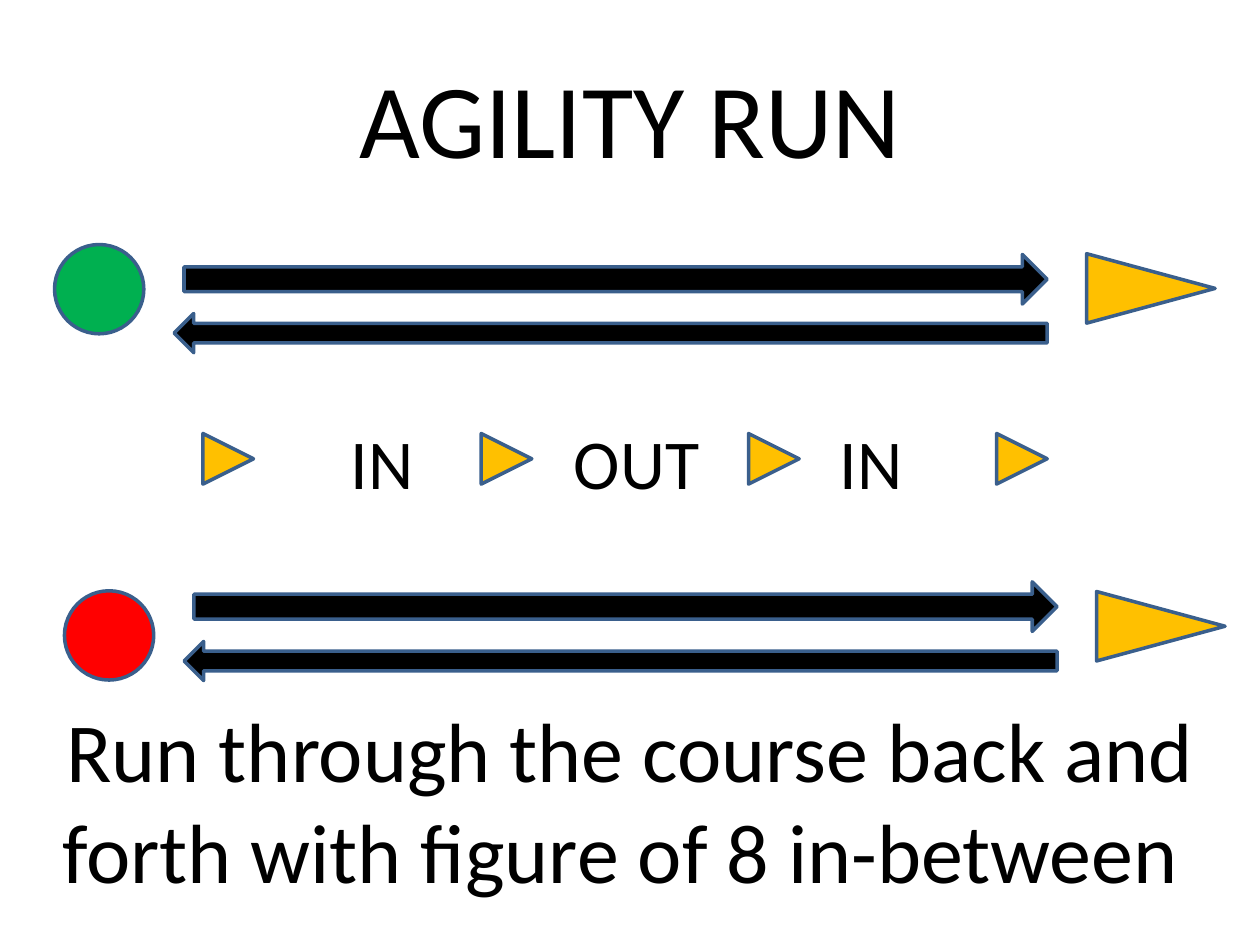
from lxml.etree import SubElement
from pptx import Presentation
from pptx.dml.color import RGBColor
from pptx.enum.shapes import MSO_SHAPE
from pptx.enum.text import MSO_ANCHOR, PP_ALIGN
from pptx.oxml.ns import qn
from pptx.util import Cm, Pt

BLACK = RGBColor(0x00, 0x00, 0x00)
GREEN = RGBColor(0x00, 0xB0, 0x50)
RED = RGBColor(0xFF, 0x00, 0x00)
AMBER = RGBColor(0xFF, 0xC0, 0x00)
OUTLINE = RGBColor(0x3A, 0x5F, 0x8C)

deck = Presentation()
deck.slide_width, deck.slide_height = Cm(25.4), Cm(19.05)
page = deck.slides.add_slide(deck.slide_layouts[6])


def add_marker(kind, left, top, width, height, color, rotation=0):
    shape = page.shapes.add_shape(kind, Cm(left), Cm(top), Cm(width), Cm(height))
    shape.shadow.inherit = False
    shape.rotation = rotation
    shape.fill.solid()
    shape.fill.fore_color.rgb = color
    shape.line.color.rgb = OUTLINE
    shape.line.width = Pt(2)


def add_text(text, left, top, width, height, size, align, anchor, tabs=()):
    box = page.shapes.add_textbox(Cm(left), Cm(top), Cm(width), Cm(height))
    frame = box.text_frame
    frame.word_wrap = True
    frame.vertical_anchor = anchor
    para = frame.paragraphs[0]
    para.alignment = align
    if tabs:
        tab_list = SubElement(para._p.get_or_add_pPr(), qn("a:tabLst"))
        for position in tabs:
            SubElement(tab_list, qn("a:tab"), pos=str(Cm(position)), algn="l")
    span = para.add_run()
    span.text = text
    for name, value in {"name": "Calibri", "size": Pt(size)}.items():
        setattr(span.font, name, value)
    span.font.color.rgb = BLACK
    return frame


# Title and instruction
add_text("AGILITY RUN", 1.27, 0.76, 22.86, 3.18, 60,
         PP_ALIGN.CENTER, MSO_ANCHOR.MIDDLE)
add_text("Run through the course back and forth with figure of 8 in-between ",
         0, 14.53, 25.4, 3.18, 48, PP_ALIGN.CENTER, MSO_ANCHOR.MIDDLE)

# Two lanes: start, run out, run back, far cone; the lower is set 0.2 cm right
for shift, color, start_top, out_top, back_top, cone_top in (
    (0, GREEN, 4.93, 5.13, 6.32, 4.52),
    (0.2, RED, 11.91, 11.73, 12.93, 11.33),
):
    add_marker(MSO_SHAPE.OVAL, 1.1 + shift, start_top, 1.8, 1.8, color)
    add_marker(MSO_SHAPE.RIGHT_ARROW, 3.71 + shift, out_top, 17.4, 1, BLACK)
    add_marker(MSO_SHAPE.RIGHT_ARROW, 3.51 + shift, back_top, 17.6, 0.79, BLACK, 180)
    add_marker(MSO_SHAPE.ISOSCELES_TRIANGLE, 22.5 + shift, cone_top, 1.4, 2.59, AMBER, 90)

# Slalom cones between the lanes
for left in (4.09, 9.7, 15.09, 20.09):
    add_marker(MSO_SHAPE.ISOSCELES_TRIANGLE, left, 8.74, 1.02, 1.02, AMBER, 90)

# Slalom directions, set in the gaps with tab stops
directions = add_text("IN\tOUT\tIN", 6.1, 8.33, 13.2, 1.96, 40,
                      PP_ALIGN.LEFT, MSO_ANCHOR.TOP, tabs=(4.5, 9.86))
directions.margin_left = Cm(0.97)

deck.save("out.pptx")
